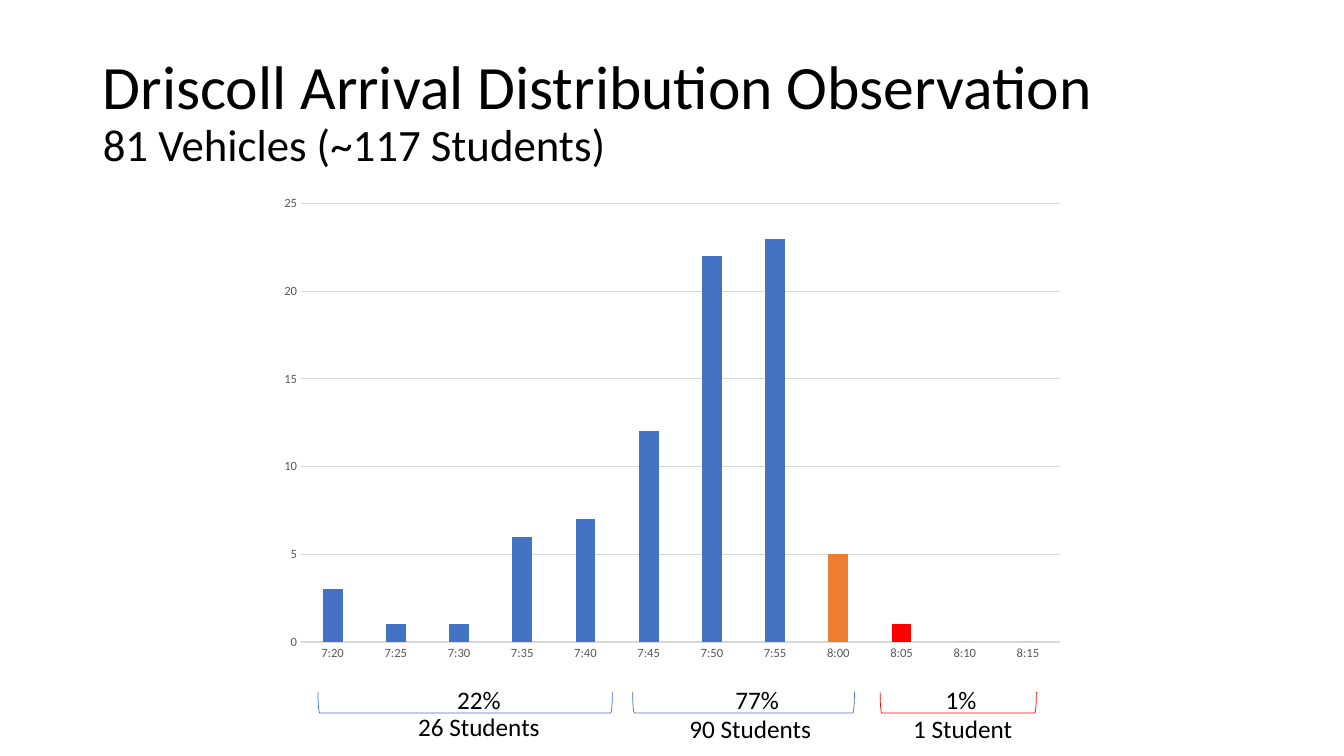
from collections import namedtuple

from pptx import Presentation
from pptx.chart.data import CategoryChartData
from pptx.dml.color import RGBColor
from pptx.enum.chart import XL_CHART_TYPE, XL_TICK_MARK
from pptx.enum.shapes import MSO_SHAPE
from pptx.enum.text import MSO_ANCHOR, MSO_AUTO_SIZE, PP_ALIGN
from pptx.util import Inches, Pt

COLUMNS = XL_CHART_TYPE.COLUMN_CLUSTERED
NO_TICK = XL_TICK_MARK.NONE
BRACKET = MSO_SHAPE.LEFT_BRACKET
MIDDLE = MSO_ANCHOR.MIDDLE
LEFT, CENTER = PP_ALIGN.LEFT, PP_ALIGN.CENTER
NO_FIT, GROW = MSO_AUTO_SIZE.NONE, MSO_AUTO_SIZE.SHAPE_TO_FIT_TEXT

FONT = "Calibri"
COLORS = {
    "text": "000000",
    "axis": "595959",
    "grid": "D9D9D9",
    "early": "4472C4",
    "bell": "ED7D31",
    "late": "FF0000",
}
ARRIVALS = [3, 1, 1, 6, 7, 12, 22, 23, 5, 1, 0, 0]
FIRST_MINUTE, MINUTE_STEP = 7 * 60 + 20, 5
POINT_COLORS = {8: "bell", 9: "late"}

Box = namedtuple("Box", "left top width height")
Period = namedtuple("Period", "left width color share share_center count count_center count_top")
PERIODS = [
    Period(6.18, 36.45, "early", "22%", 26.1, "26 Students", 26.1, 39),
    Period(45.13, 27.47, "early", "77%", 60.55, "90 Students", 59.7, 42),
    Period(75.78, 19.35, "late", "1%", 85.8, "1 Student", 86, 42),
]


def color(name):
    return RGBColor.from_string(COLORS[name])


def part(box, left, top, width, height):
    return Box(
        round(box.left + box.width * left / 100),
        round(box.top + box.height * top / 100),
        round(box.width * width / 100),
        round(box.height * height / 100),
    )


def format_font(font, size, color_name="text"):
    font.name = FONT
    font.size = Pt(size)
    font.bold = False
    font.color.rgb = color(color_name)


def add_text(paragraph, text, size=18, align=LEFT, spacing=None):
    paragraph.alignment = align
    if spacing:
        paragraph.line_spacing = spacing
    run = paragraph.add_run()
    run.text = text
    format_font(run.font, size)


def build_title(slide, box):
    title = slide.shapes.title
    title.left, title.top, title.width, title.height = box
    frame = title.text_frame
    frame.word_wrap = True
    frame.auto_size = NO_FIT
    frame.vertical_anchor = MIDDLE
    paragraph = frame.paragraphs[0]
    add_text(paragraph, "Driscoll Arrival Distribution Observation ", size=44, spacing=0.9)
    paragraph.add_line_break()
    add_text(paragraph, "81 Vehicles (~117 Students)", size=32, spacing=0.9)


def format_line(line, color_name, width=0.75):
    line.color.rgb = color(color_name)
    line.width = Pt(width)


def build_chart(slide, box):
    data = CategoryChartData()
    minutes = [FIRST_MINUTE + MINUTE_STEP * index for index in range(len(ARRIVALS))]
    data.categories = [f"{minute // 60}:{minute % 60:02d}" for minute in minutes]
    data.add_series("Series 1", ARRIVALS)
    chart = slide.shapes.add_chart(COLUMNS, *box, data).chart
    chart.has_legend = False
    chart.has_title = False
    format_font(chart.font, 10)

    for axis in (chart.category_axis, chart.value_axis):
        axis.major_tick_mark = NO_TICK
        axis.minor_tick_mark = NO_TICK
        format_font(axis.tick_labels.font, 9, "axis")
    format_line(chart.category_axis.format.line, "grid")
    value_axis = chart.value_axis
    value_axis.minimum_scale, value_axis.maximum_scale, value_axis.major_unit = 0, 25, 5
    value_axis.format.line.fill.background()
    format_line(value_axis.major_gridlines.format.line, "grid")

    plot = chart.plots[0]
    plot.gap_width, plot.overlap = 219, -27
    plot.vary_by_categories = False
    series = plot.series[0]
    series.format.fill.solid()
    series.format.fill.fore_color.rgb = color("early")
    for index, name in POINT_COLORS.items():
        fill = series.points[index].format.fill
        fill.solid()
        fill.fore_color.rgb = color(name)


def add_bracket(slide, box, color_name):
    left = box.left + (box.width - box.height) // 2
    top = box.top + (box.height - box.width) // 2
    bracket = slide.shapes.add_shape(BRACKET, left, top, box.height, box.width)
    bracket.rotation = 270
    bracket.shadow.inherit = False
    bracket.fill.background()
    format_line(bracket.line, color_name, 0.5)


def add_label(slide, box, text):
    frame = slide.shapes.add_textbox(*box).text_frame
    frame.word_wrap = False
    frame.auto_size = GROW
    add_text(frame.paragraphs[0], text, align=CENTER)


def build_periods(slide, box):
    for period in PERIODS:
        add_bracket(slide, part(box, period.left, 18, period.width, 30.4), period.color)
        add_label(slide, part(box, period.share_center - 4, 0, 8, 58), period.share)
        add_label(slide, part(box, period.count_center - 9, period.count_top, 18, 58), period.count)


def main():
    presentation = Presentation()
    presentation.slide_width, presentation.slide_height = Inches(13.33), Inches(7.5)
    slide = presentation.slides.add_slide(presentation.slide_layouts[5])
    page = Box(0, 0, presentation.slide_width, presentation.slide_height)
    build_title(slide, part(page, 6.9, 5.33, 86.27, 19.33))
    build_chart(slide, part(page, 19.95, 24.67, 60.09, 64))
    build_periods(slide, part(page, 19.95, 89.87, 60.09, 9.2))
    presentation.save("out.pptx")


if __name__ == "__main__":
    main()
